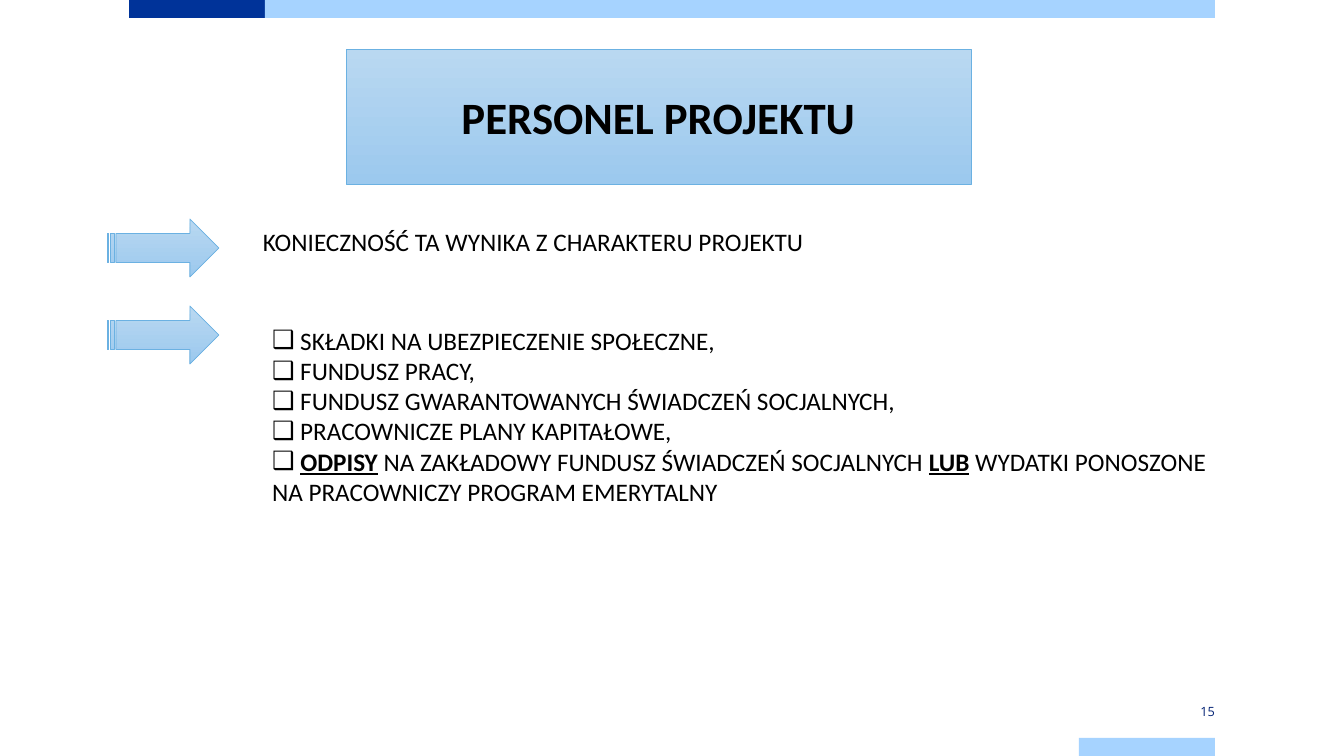
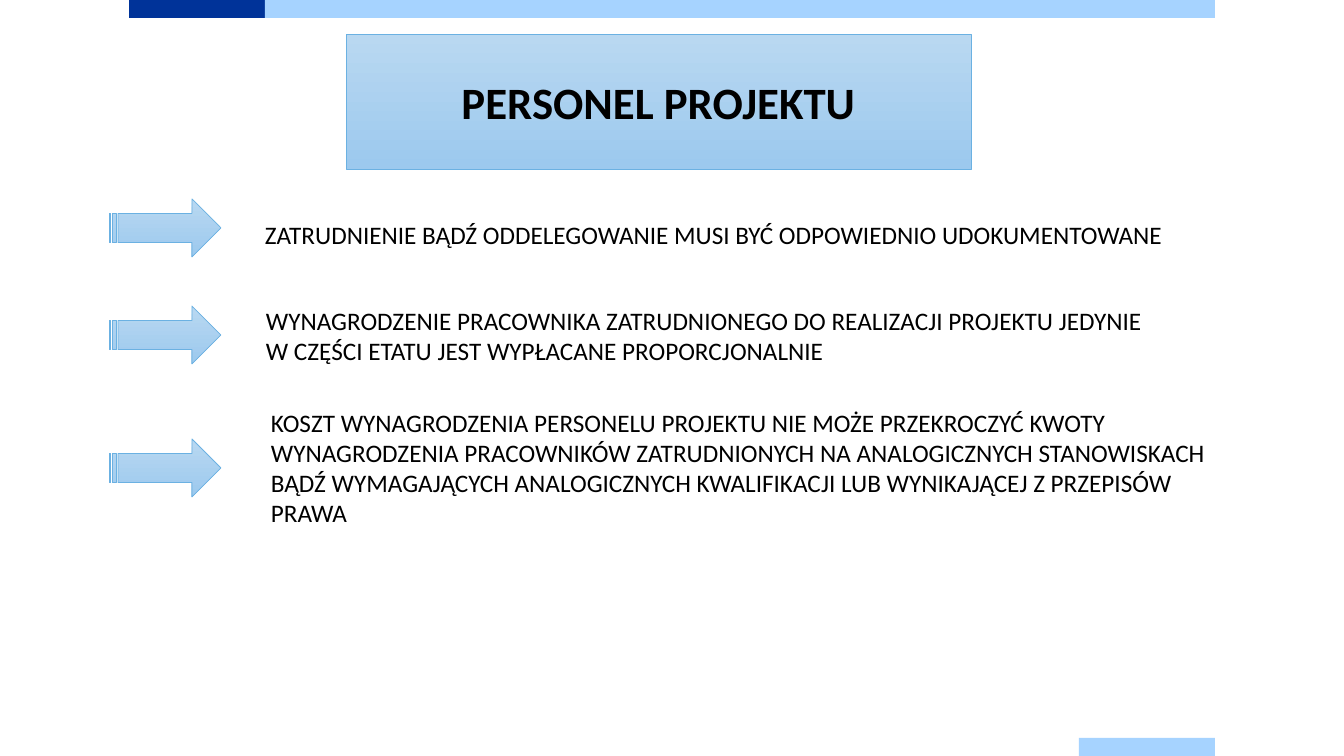
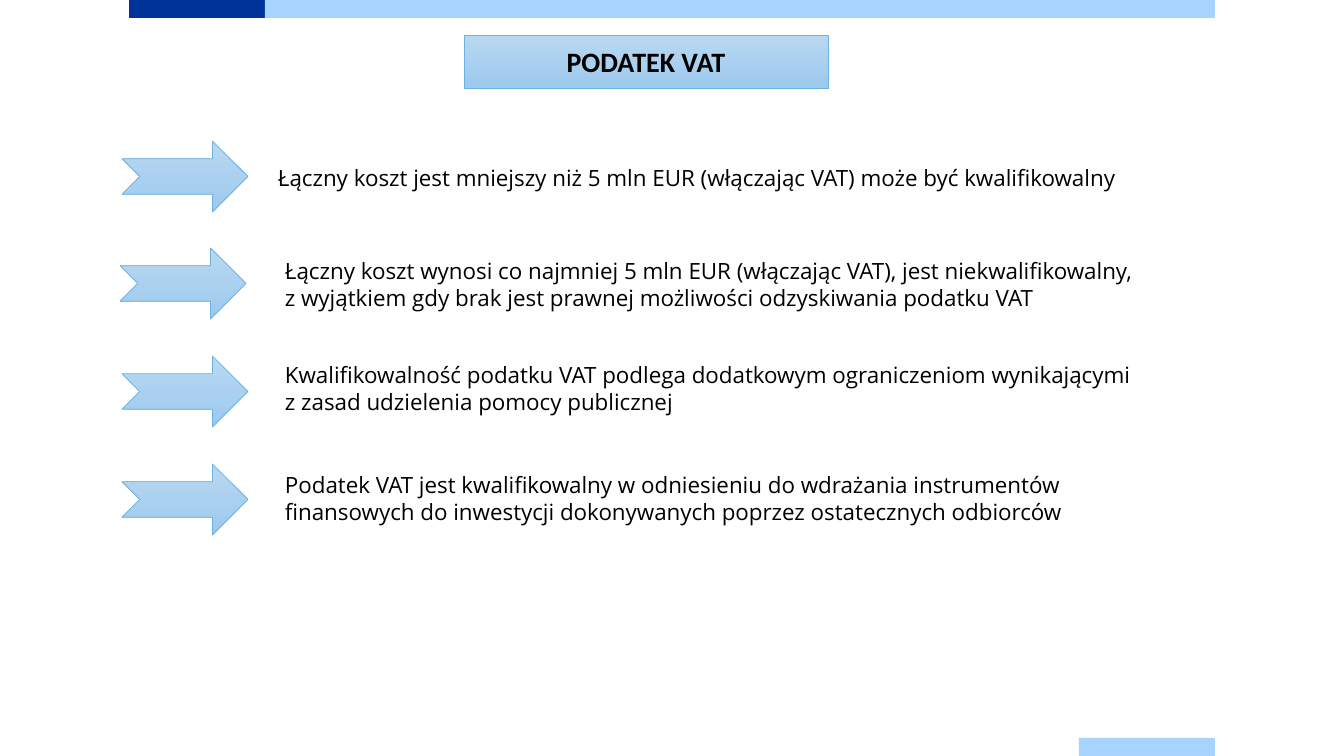
from lxml.etree import SubElement
from pptx import Presentation
from pptx.dml.color import RGBColor
from pptx.enum.shapes import MSO_SHAPE
from pptx.enum.text import MSO_ANCHOR, MSO_AUTO_SIZE, PP_ALIGN
from pptx.oxml.ns import qn
from pptx.util import Emu, Pt

# Content: boxes are (left, top, width, height) in px
COLORS = {"navy": "003399", "sky": "A6D3FF", "number": "002073", "black": "000000",
          "top": "B9D8F1", "bottom": "9CC9EE", "edge": "6BB1E2"}

BANDS = [("navy", (129, 0, 136, 18)), ("sky", (265, 0, 950, 18)),
         ("sky", (1079, 738, 136, 18))]

STAFF = {"title": "PERSONEL PROJEKTU", "geom": "rect", "title_size": 32,
         "arrow": MSO_SHAPE.STRIPED_RIGHT_ARROW, "arrow_size": (112, 58),
         "font": "Calibri", "size": 18}
VAT = {"title": "PODATEK VAT", "geom": "roundRect", "title_size": 20,
       "arrow": MSO_SHAPE.NOTCHED_RIGHT_ARROW, "arrow_size": (126, 71),
       "font": "Open Sans", "size": 16}

SLIDES = [
    {**STAFF, "box": (346, 49, 625, 135), "number": "15",
     "arrows": [(107, 219), (107, 306)],
     "texts": [((253, 221, 574, 40), "KONIECZNOŚĆ TA WYNIKA Z CHARAKTERU PROJEKTU")],
     "list_box": (262, 320, 968, 194),
     # Runs with an odd index are bold and underlined
     "list": [
         [" SKŁADKI NA UBEZPIECZENIE SPOŁECZNE,"],
         [" FUNDUSZ PRACY,"],
         [" FUNDUSZ GWARANTOWANYCH ŚWIADCZEŃ SOCJALNYCH,"],
         [" PRACOWNICZE PLANY KAPITAŁOWE,"],
         [" ", "ODPISY", " NA ZAKŁADOWY FUNDUSZ ŚWIADCZEŃ SOCJALNYCH ", "LUB",
          " WYDATKI PONOSZONE NA PRACOWNICZY PROGRAM EMERYTALNY"]]},
    {**STAFF, "box": (346, 34, 625, 135),
     "arrows": [(109, 199), (109, 306), (109, 439)],
     "texts": [
         ((255, 214, 937, 40),
          "ZATRUDNIENIE BĄDŹ ODDELEGOWANIE MUSI BYĆ ODPOWIEDNIO UDOKUMENTOWANE"),
         ((256, 300, 929, 72),
          "WYNAGRODZENIE PRACOWNIKA ZATRUDNIONEGO DO REALIZACJI PROJEKTU JEDYNIE\v"
          "W CZĘŚCI ETATU JEST WYPŁACANE PROPORCJONALNIE"),
         ((261, 402, 957, 132),
          "KOSZT WYNAGRODZENIA PERSONELU PROJEKTU NIE MOŻE PRZEKROCZYĆ KWOTY "
          "WYNAGRODZENIA PRACOWNIKÓW ZATRUDNIONYCH NA ANALOGICZNYCH STANOWISKACH "
          "BĄDŹ WYMAGAJĄCYCH ANALOGICZNYCH KWALIFIKACJI LUB WYNIKAJĄCEJ Z PRZEPISÓW "
          "PRAWA")]},
    {**VAT, "box": (464, 35, 364, 53),
     "arrows": [(122, 141), (120, 248), (122, 356), (122, 464)],
     "texts": [
         ((268, 159, 955, 37),
          "Łączny koszt jest mniejszy niż 5 mln EUR (włączając VAT) może być "
          "kwalifikowalny"),
         ((275, 252, 950, 67),
          "Łączny koszt wynosi co najmniej 5 mln EUR (włączając VAT), jest "
          "niekwalifikowalny,\vz wyjątkiem gdy brak jest prawnej możliwości "
          "odzyskiwania podatku VAT"),
         ((275, 356, 874, 65),
          "Kwalifikowalność podatku VAT podlega dodatkowym ograniczeniom "
          "wynikającymi z zasad udzielenia pomocy publicznej"),
         ((275, 466, 859, 65),
          "Podatek VAT jest kwalifikowalny w odniesieniu do wdrażania instrumentów "
          "finansowych do inwestycji dokonywanych poprzez ostatecznych odbiorców")]},
]


def px(n):
    return Emu(round(n * 12192000 / 1344))


def place(shape, box):
    shape.left, shape.top, shape.width, shape.height = map(px, box)


def rgb(name):
    return RGBColor.from_string(COLORS[name])


def style(par, face, size, color="black", bold=False):
    font = par.font
    font.name, font.size, font.bold = face, Pt(size), bold
    font.color.rgb = rgb(color)


def shade(shape):
    shape.fill.gradient()
    shape.fill.gradient_angle = 270
    for stop, name in zip(shape.fill.gradient_stops, ("top", "bottom")):
        stop.color.rgb = rgb(name)
    shape.line.color.rgb = rgb("edge")
    shape.line.width = Pt(0.5)
    shape.shadow.inherit = False


def add_bands(slide, master):
    """Build the bands and move them to the master, behind everything."""
    tree = master.element.cSld.spTree
    for i, (color, box) in enumerate(BANDS):
        band = slide.shapes.add_shape(MSO_SHAPE.RECTANGLE, *map(px, box))
        band.fill.solid()
        band.fill.fore_color.rgb = rgb(color)
        band.line.fill.background()
        band.shadow.inherit = False
        tree.insert(2 + i, band.element)


def add_title(slide, data):
    title = slide.shapes.title
    place(title, data["box"])
    geom = SubElement(title.element.spPr, qn("a:prstGeom"), prst=data["geom"])
    SubElement(geom, qn("a:avLst"))
    shade(title)
    frame = title.text_frame
    frame.text = data["title"]
    frame.auto_size = MSO_AUTO_SIZE.NONE
    frame.vertical_anchor = MSO_ANCHOR.MIDDLE
    par = frame.paragraphs[0]
    par.alignment = PP_ALIGN.CENTER
    style(par, "Calibri", data["title_size"], bold=True)


def add_text(slide, box, text, face, size, color="black"):
    frame = slide.shapes.add_textbox(*map(px, box)).text_frame
    frame.word_wrap = True
    par = frame.paragraphs[0]
    par.text = text
    style(par, face, size, color)
    return frame


def add_list(slide, data):
    body = slide.placeholders[1]
    place(body, data["list_box"])
    frame = body.text_frame
    frame.auto_size = MSO_AUTO_SIZE.NONE
    for i, runs in enumerate(data["list"]):
        par = frame.add_paragraph() if i else frame.paragraphs[0]
        props = par._p.get_or_add_pPr()
        props.set("marL", "0")
        props.set("indent", "0")
        SubElement(props, qn("a:buChar"), char="❑")
        par.space_before = Pt(0)
        par.line_spacing = 1.0
        style(par, data["font"], data["size"])
        for j, text in enumerate(runs):
            run = par.add_run()
            run.text = text
            if j % 2:
                run.font.bold = run.font.underline = True


def add_number(slide, text):
    frame = add_text(slide, (1079, 702, 136, 18), text, "Open Sans", 9.1, "number")
    frame.margin_left = frame.margin_right = 0
    frame.margin_top = frame.margin_bottom = 0
    frame.vertical_anchor = MSO_ANCHOR.MIDDLE
    frame.paragraphs[0].alignment = PP_ALIGN.RIGHT


def main():
    prs = Presentation()
    prs.slide_width, prs.slide_height = px(1344), px(756)
    for i, data in enumerate(SLIDES):
        layout = prs.slide_layouts[1 if "list" in data else 5]
        slide = prs.slides.add_slide(layout)
        if i == 0:
            add_bands(slide, prs.slide_master)
        add_title(slide, data)
        for spot in data["arrows"]:
            box = spot + data["arrow_size"]
            shade(slide.shapes.add_shape(data["arrow"], *map(px, box)))
        for box, text in data["texts"]:
            add_text(slide, box, text, data["font"], data["size"])
        if "list" in data:
            add_list(slide, data)
        if "number" in data:
            add_number(slide, data["number"])
    prs.save("out.pptx")


if __name__ == "__main__":
    main()
